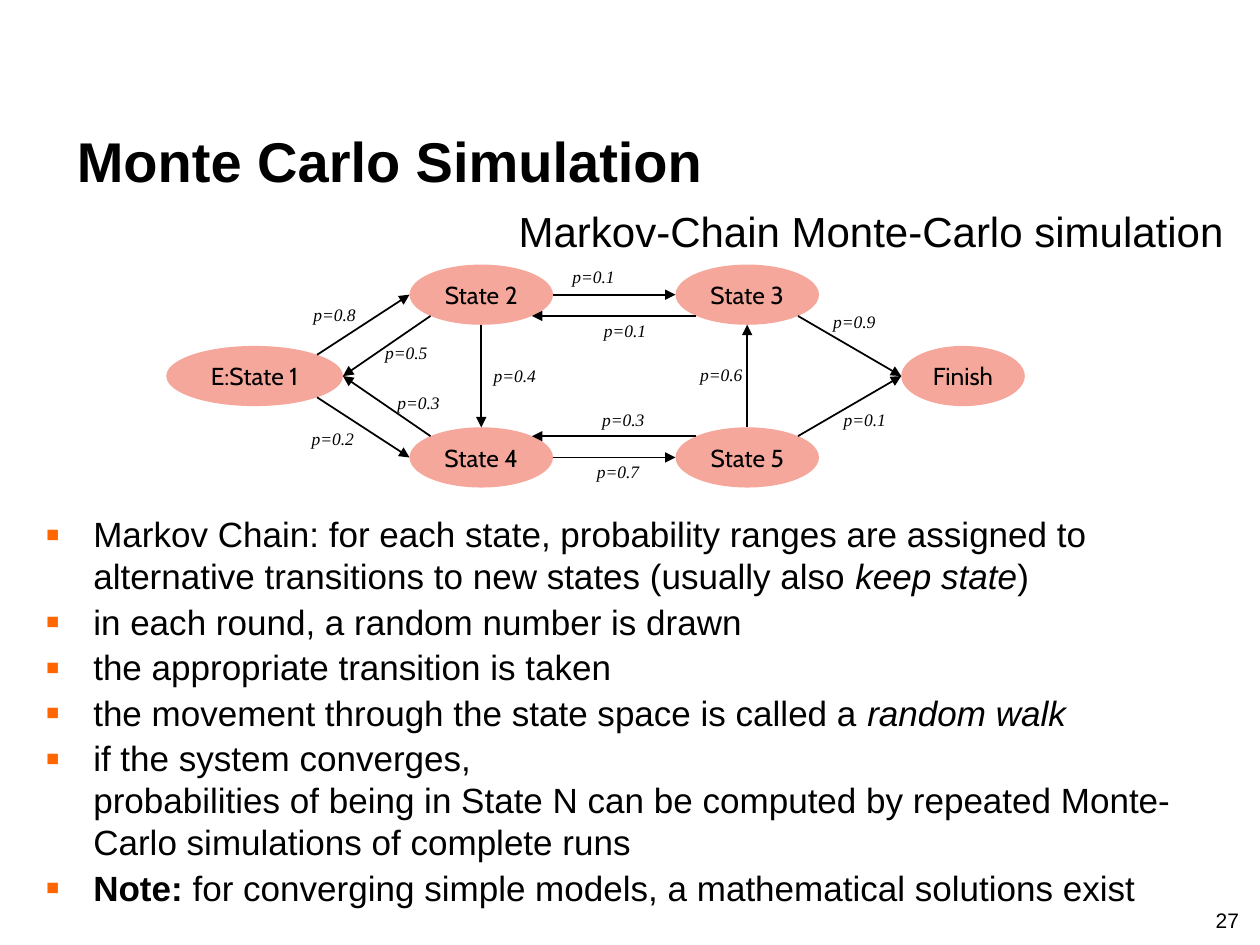
from math import cos, pi, sin

from lxml.etree import SubElement
from pptx import Presentation
from pptx.dml.color import RGBColor
from pptx.enum.shapes import MSO_CONNECTOR as CONN, MSO_SHAPE as SHAPE
from pptx.enum.text import MSO_ANCHOR as ANCHOR, MSO_AUTO_SIZE as AUTO, PP_ALIGN as ALIGN
from pptx.oxml.ns import qn
from pptx.util import Pt

BLACK, SALMON, ORANGE = "000000", "F6A79C", "FF6600"
NODE_H = 34.4
LABEL_W, LABEL_H = 39, 19.4

NODES = {
    "State 2": (139, 0, 82),
    "State 3": (291, 0, 82),
    "E:State 1": (0, 46.5, 101),
    "Finish": (420, 46.5, 70.6),
    "State 5": (291, 93, 82),
    "State 4": (139, 93, 82),
}

ANGLES = {"e": 0, "se": 45, "s": 90, "sw": 135, "w": 180, "nw": 225, "n": 270, "ne": 315}

EDGES = [
    ("E:State 1", "ne", "State 2", "w", "p=0.8", 77, 19),
    ("E:State 1", "se", "State 4", "w", "p=0.2", 76, 90),
    ("State 4", "nw", "E:State 1", "e", "p=0.3", 125, 69),
    ("State 2", "sw", "E:State 1", "e", "p=0.5", 118, 41),
    ("State 2", "e", "State 3", "w", "p=0.1", 225, -3),
    ("State 4", "e", "State 5", "w", "p=0.7", 239, 109),
    ("State 5", "nw", "State 4", "ne", "p=0.3", 242, 79),
    ("State 5", "n", "State 3", "s", "p=0.6", 298, 53),
    ("State 5", "ne", "Finish", "w", "p=0.1", 380, 79),
    ("State 3", "se", "Finish", "w", "p=0.9", 374, 23),
    ("State 3", "sw", "State 2", "se", "p=0.1", 243, 28),
    ("State 2", "s", "State 4", "n", "p=0.4", 180, 54),
]

POINTS = [
    [("Markov Chain: for each state, probability ranges are assigned to "
      "alternative transitions to new states (usually also ", {}),
     ("keep state", {"italic": True}), (")", {})],
    [("in each round, a random number is drawn", {})],
    [("the appropriate transition is taken", {})],
    [("the movement through the state space is called a ", {}),
     ("random walk", {"italic": True})],
    [("if the system converges,\nprobabilities of being in State N can be computed "
      "by repeated Monte-Carlo simulations of complete runs", {})],
    [("Note: ", {"bold": True}),
     ("for converging simple models, a mathematical solutions exist", {})],
]


def rgb(hex_color):
    return RGBColor.from_string(hex_color)


def add_text(p, text, size=20, font="Arial", color=BLACK, bold=False, italic=False):
    for i, line in enumerate(text.split("\n")):
        if i:
            p.add_line_break()
        r = p.add_run()
        r.text = line
        f = r.font
        f.size, f.name, f.bold, f.italic = Pt(size), font, bold, italic
        f.color.rgb = rgb(color)


def place(sp, box):
    sp.left, sp.top, sp.width, sp.height = (Pt(v) for v in box)
    tf = sp.text_frame
    tf.auto_size = AUTO.NONE
    return tf


def add_label(slide, box, text, **fmt):
    tf = slide.shapes.add_textbox(*(Pt(v) for v in box)).text_frame
    tf.word_wrap = False
    add_text(tf.paragraphs[0], text, **fmt)


def set_bullet(p, char=None, indent=0):
    pPr = p._p.get_or_add_pPr()
    pPr.set("marL", str(Pt(indent)))
    pPr.set("indent", str(-Pt(indent)))
    if char is None:
        SubElement(pPr, qn("a:buNone"))
        return
    SubElement(SubElement(pPr, qn("a:buClr")), qn("a:srgbClr"), val=ORANGE)
    SubElement(pPr, qn("a:buSzPct"), val="120000")
    SubElement(pPr, qn("a:buFont"), typeface="Arial")
    SubElement(pPr, qn("a:buChar"), char=char)


def add_title(sp, box):
    tf = place(sp, box)
    tf.vertical_anchor = ANCHOR.MIDDLE
    p = tf.paragraphs[0]
    p.alignment = ALIGN.LEFT
    add_text(p, "Monte Carlo Simulation", size=32, bold=True)


def add_subtitle(sp, box):
    p = place(sp, box).paragraphs[0]
    set_bullet(p)
    p.alignment = ALIGN.RIGHT
    p.space_before, p.line_spacing = Pt(0), Pt(28.8)
    add_text(p, "Markov-Chain Monte-Carlo simulation", size=24)


def add_points(sp, box):
    tf = place(sp, box)
    tf.margin_right = Pt(4.3)
    for i, runs in enumerate(POINTS):
        p = tf.add_paragraph() if i else tf.paragraphs[0]
        set_bullet(p, "▪", 27.4)
        p.space_before, p.line_spacing = Pt(2 if i else 0), Pt(24)
        for text, fmt in runs:
            add_text(p, text, **fmt)


def add_node(slide, box, name):
    sp = slide.shapes.add_shape(SHAPE.OVAL, *(Pt(v) for v in box))
    sp.shadow.inherit = False
    sp.fill.solid()
    sp.fill.fore_color.rgb = rgb(SALMON)
    sp.line.fill.background()
    tf = sp.text_frame
    tf.word_wrap = False
    tf.vertical_anchor = ANCHOR.MIDDLE
    p = tf.paragraphs[0]
    p.alignment = ALIGN.CENTER
    add_text(p, name, size=14, font="Cabin")


def rim_point(box, side):
    x, y, w, h = box
    angle = ANGLES[side] * pi / 180
    return Pt(x + w / 2 * (1 + cos(angle))), Pt(y + h / 2 * (1 + sin(angle)))


def add_arrow(slide, start, end):
    c = slide.shapes.add_connector(CONN.STRAIGHT, *start, *end)
    c.line.color.rgb = rgb(BLACK)
    c.line.width = Pt(1)
    SubElement(c.line._get_or_add_ln(), qn("a:tailEnd"), type="triangle")
    SubElement(c._element.spPr, qn("a:effectLst"))


def add_state_graph(slide, left, top):
    boxes = {name: (left + x, top + y, w, NODE_H) for name, (x, y, w) in NODES.items()}
    for name, box in boxes.items():
        add_node(slide, box, name)
    for src, src_side, dst, dst_side, label, x, y in EDGES:
        add_arrow(slide, rim_point(boxes[src], src_side), rim_point(boxes[dst], dst_side))
        add_label(slide, (left + x, top + y, LABEL_W, LABEL_H), label,
                  size=10, font="Times New Roman", italic=True)


def main():
    prs = Presentation()
    prs.slide_width, prs.slide_height = Pt(720), Pt(540)
    slide = prs.slides.add_slide(prs.slide_layouts[3])
    for sp in list(slide.placeholders)[3:]:
        sp._element.getparent().remove(sp._element)
    title, subtitle, points = slide.placeholders
    add_title(title, (36.7, 66.2, 647.3, 51.1))
    add_subtitle(subtitle, (18.7, 113.8, 687.6, 37.4))
    add_state_graph(slide, 95, 151.2)
    add_points(points, (18.7, 289.4, 687.6, 252.7))
    add_label(slide, (687.6, 514.8, 29.5, 21.6), "27", size=12)
    prs.save("out.pptx")


if __name__ == "__main__":
    main()
